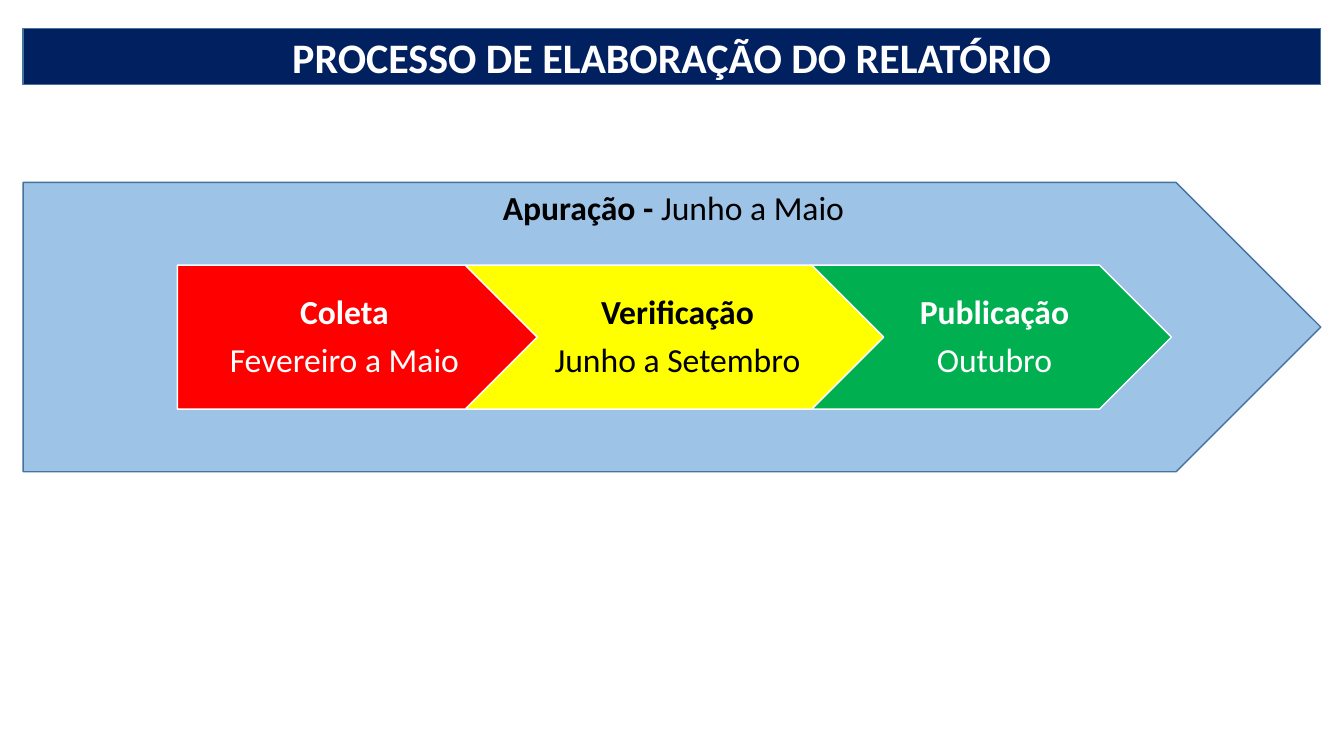
import pptx
import pptx.util
import pptx.dml.color
import pptx.enum.shapes
import pptx.enum.text
import lxml.etree

Inches, Pt = pptx.util.Inches, pptx.util.Pt
SHAPES = pptx.enum.shapes.MSO_SHAPE
MIDDLE = pptx.enum.text.MSO_ANCHOR.MIDDLE
CENTER = pptx.enum.text.PP_ALIGN.CENTER

# Content
TITLE = "PROCESSO DE ELABORAÇÃO DO RELATÓRIO"
PERIOD = ("Apuração - ", "Junho a Maio")
STEPS = [  # name, months, preset, width, fill, text colour, left inset
    ("Coleta", "Fevereiro a Maio", SHAPES.PENTAGON, 3.57, "FF0000", "FFFFFF", 0.14),
    ("Verificação", "Junho a Setembro", SHAPES.CHEVRON, 4.15, "FFFF00", "000000", 0.1),
    ("Publicação", "Outubro", SHAPES.CHEVRON, 3.57, "00B050", "FFFFFF", 0.1),
]
LEFT, WIDTH = 0.23, 12.87
STEPS_LEFT, STEPS_TOP, STEP_HEIGHT = 1.76, 2.63, 1.43
EDGE = "43739E"


def rgb(value):
    return pptx.dml.color.RGBColor.from_string(value)


def paint(shape, fill, line):
    shape.fill.solid()
    shape.fill.fore_color.rgb = rgb(fill)
    shape.line.color.rgb = rgb(line)
    shape.line.width = Pt(1)


def add_block(preset, box, fill, line):
    block = slide.shapes.add_shape(preset, *map(Inches, box))
    block.shadow.inherit = False
    paint(block, fill, line)
    return block


def style(run, size, color, bold):
    run.font.name = "Calibri"
    run.font.size = Pt(size)
    run.font.bold = bold
    run.font.color.rgb = rgb(color)


def set_insets(frame, left, top, right, bottom):
    frame.margin_left, frame.margin_top = Inches(left), Inches(top)
    frame.margin_right, frame.margin_bottom = Inches(right), Inches(bottom)


deck = pptx.Presentation()
deck.slide_width, deck.slide_height = Inches(13.33), Inches(7.5)
slide = deck.slides.add_slide(deck.slide_layouts[5])

# Title as a rounded banner
title = slide.shapes.title
title.left, title.top = Inches(LEFT), Inches(0.28)
title.width, title.height = Inches(WIDTH), Inches(0.56)
geometry = lxml.etree.SubElement(
    title.element.spPr, pptx.oxml.ns.qn("a:prstGeom"), prst="roundRect")
lxml.etree.SubElement(geometry, pptx.oxml.ns.qn("a:avLst"))
paint(title, "002060", EDGE)
title.text_frame.text = TITLE
title.text_frame.auto_size = pptx.enum.text.MSO_AUTO_SIZE.NONE
title.text_frame.vertical_anchor = MIDDLE
set_insets(title.text_frame, 0.1, 0.05, 0.1, 0.05)
title.text_frame.paragraphs[0].alignment = CENTER
style(title.text_frame.paragraphs[0].runs[0], 30, "FFFFFF", True)

# Arrow spanning the whole period
add_block(SHAPES.PENTAGON, (LEFT, 1.81, WIDTH, 2.87), "9DC3E6", EDGE)

# Steps, each one starting where the previous point begins
step_left = STEPS_LEFT
for name, months, preset, width, fill, color, inset in STEPS:
    box = (step_left, STEPS_TOP, width, STEP_HEIGHT)
    step = add_block(preset, box, fill, "FFFFFF")
    frame = step.text_frame
    frame.text = f"{name}\n{months}"
    frame.word_wrap = True
    frame.vertical_anchor = MIDDLE
    set_insets(frame, inset, 0.07, 0.04, 0.07)
    for paragraph, bold in zip(frame.paragraphs, (True, False)):
        paragraph.alignment = CENTER
        paragraph.line_spacing = 0.9
        paragraph.space_after = Pt(8.4)
        style(paragraph.runs[0], 24, color, bold)
    step_left += width - STEP_HEIGHT / 2

# Period label
period = slide.shapes.add_textbox(*map(Inches, (STEPS_LEFT, 1.81, 9.84, 0.5)))
period.text_frame.word_wrap = True
label = period.text_frame.paragraphs[0]
label.alignment = CENTER
for words, bold in zip(PERIOD, (True, False)):
    run = label.add_run()
    run.text = words
    style(run, 24, "000000", bold)

deck.save("out.pptx")
